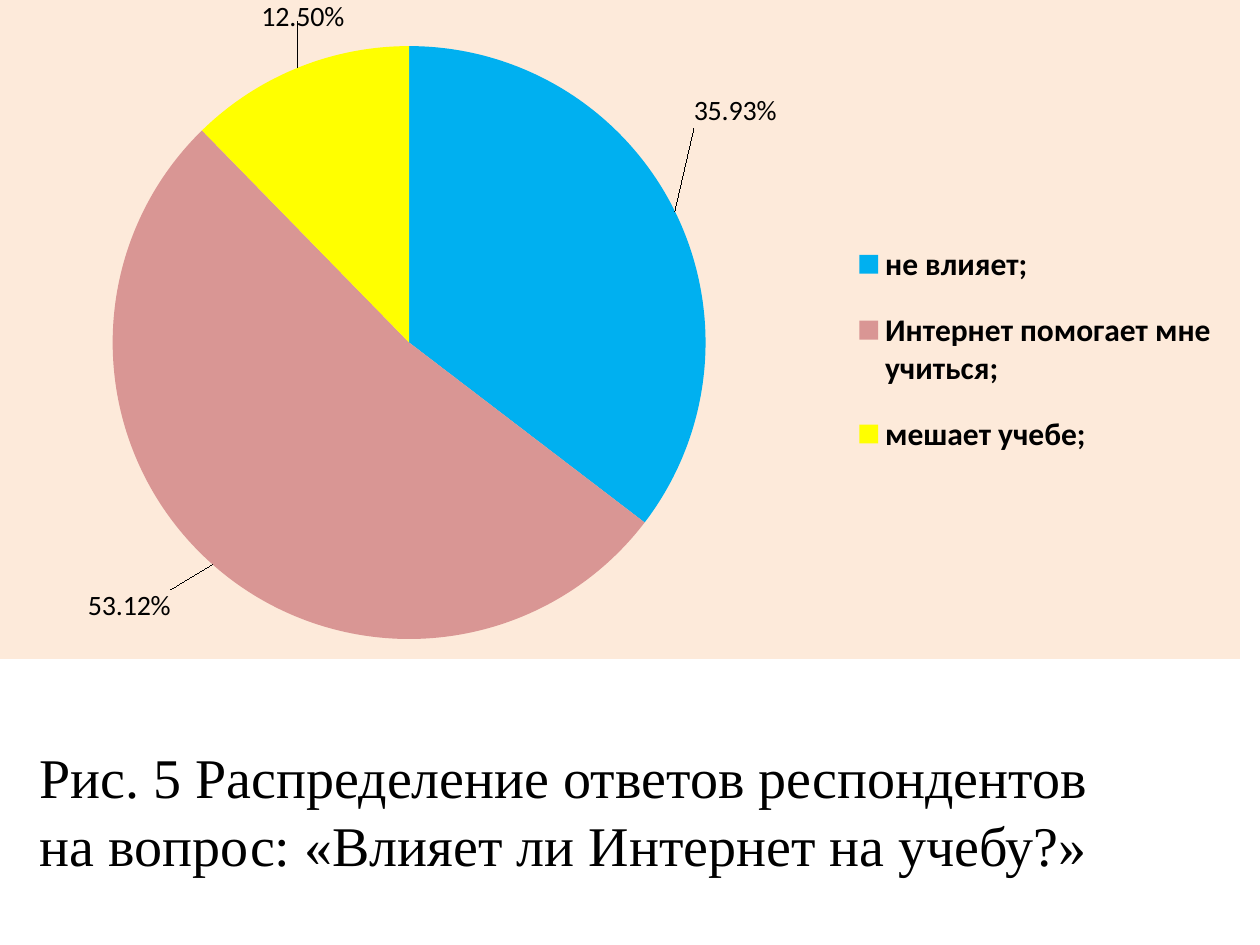
"""Build a slide with a pie chart of survey answers and its caption."""
from pptx import Presentation as Deck
from pptx.chart.data import CategoryChartData as Data
from pptx.dml.color import RGBColor as Color
from pptx.enum.chart import XL_CHART_TYPE as Kind
from pptx.enum.chart import XL_LABEL_POSITION as Spot
from pptx.enum.chart import XL_LEGEND_POSITION as Side
from pptx.enum.text import MSO_ANCHOR as Anchor
from pptx.enum.text import PP_ALIGN as Align
from pptx.oxml import parse_xml
from pptx.oxml.ns import nsdecls
from pptx.util import Pt

BLACK = Color(0x00, 0x00, 0x00)
PEACH = Color(0xFD, 0xEA, 0xDA)
BLUE = Color(0x00, 0xB0, 0xF0)
PINK = Color(0xD9, 0x96, 0x94)
YELLOW = Color(0xFF, 0xFF, 0x00)
FORMAT = "0.00%"

SLICES = [
    ("не влияет;", 0.3593, BLUE, (0.01, -0.12)),
    ("Интернет помогает мне учиться;", 0.5312, PINK, (-0.03, 0.03)),
    ("мешает учебе;", 0.125, YELLOW, (0.04, -0.06)),
]
CAPTION = ("Рис. 5 Распределение ответов респондентов "
           "на вопрос: «Влияет ли Интернет на учебу?»")


def set_font(font, size, name="Calibri", bold=False):
    """Set size, typeface, weight and black colour."""
    font.size, font.name, font.bold = Pt(size), name, bold
    font.color.rgb = BLACK


def make_layout(x, y, w=None, h=None, inner=False):
    """Return a manual layout in fractions of the chart."""
    tags = '<c:layoutTarget val="inner"/>' if inner else ""
    if w:
        tags += '<c:xMode val="edge"/><c:yMode val="edge"/>'
    sizes = zip("xywh", (x, y, w, h))
    tags += "".join(f'<c:{key} val="{val}"/>' for key, val in sizes if val)
    return parse_xml(f'<c:layout {nsdecls("c")}><c:manualLayout>{tags}'
                     '</c:manualLayout></c:layout>')


def place(parent, layout, after=None):
    """Put a layout into its parent in place of an older one."""
    for old in parent.xpath("./c:layout"):
        parent.remove(old)
    if after is None:
        parent.insert(0, layout)
    else:
        after.addnext(layout)


def fill_back(chart, color):
    """Fill the chart area without an outline."""
    area = parse_xml(
        f'<c:spPr {nsdecls("c", "a")}><a:solidFill><a:srgbClr val="{color}"/>'
        '</a:solidFill><a:ln><a:noFill/></a:ln></c:spPr>')
    chart._chartSpace.xpath("./c:chart")[0].addnext(area)


def style_slices(series):
    """Colour the slices and move their labels off the rim."""
    labels = series.data_labels
    labels.show_value = True
    labels.number_format, labels.number_format_is_linked = FORMAT, False
    labels.position = Spot.OUTSIDE_END
    set_font(labels.font, 16)
    for i, (_, _, color, shift) in enumerate(SLICES):
        point = series.points[i]
        point.format.fill.solid()
        point.format.fill.fore_color.rgb = color
        set_font(point.data_label.font, 16)
        point.data_label.position = Spot.OUTSIDE_END
        label = series._element.xpath(f'.//c:dLbl[c:idx/@val="{i}"]')[0]
        layout = make_layout(*shift)
        place(label, layout, label.xpath("./c:idx")[0])
        layout.addnext(parse_xml(
            f'<c:numFmt {nsdecls("c")} formatCode="{FORMAT}" '
            'sourceLinked="0"/>'))


def add_pie(slide):
    """Add the pie chart with its legend."""
    data = Data(number_format=FORMAT)
    data.categories = [name for name, *_ in SLICES]
    data.add_series("Series 1", [value for _, value, *_ in SLICES])
    chart = slide.shapes.add_chart(
        Kind.PIE, Pt(0), Pt(0), Pt(708.5), Pt(376.5), data).chart
    set_font(chart.font, 10)
    chart.has_title = False
    fill_back(chart, PEACH)
    chart.plots[0].vary_by_categories = True
    style_slices(chart.plots[0].series[0])
    place(chart._chartSpace.xpath(".//c:plotArea")[0],
          make_layout(0.09, 0.07, 0.48, 0.9, inner=True))
    chart.has_legend = True
    legend = chart.legend
    legend.position, legend.include_in_layout = Side.RIGHT, False
    set_font(legend.font, 18, bold=True)
    place(legend._element, make_layout(0.68, 0.33, 0.31, 0.4),
          legend._element.xpath("./c:legendPos")[0])


def add_caption(slide):
    """Add the figure caption below the chart."""
    frame = slide.shapes.add_textbox(
        Pt(0), Pt(399.5), Pt(644.5), Pt(83)).text_frame
    frame.word_wrap = True
    frame.vertical_anchor = Anchor.TOP
    frame.margin_top = Pt(25)
    line = frame.paragraphs[0]
    line.text, line.alignment = CAPTION, Align.CENTER
    set_font(line.font, 32, "Times New Roman")


def main():
    """Build and save the slide."""
    deck = Deck()
    deck.slide_width, deck.slide_height = Pt(720), Pt(540)
    slide = deck.slides.add_slide(deck.slide_layouts[6])
    add_caption(slide)
    add_pie(slide)
    deck.save("out.pptx")


if __name__ == "__main__":
    main()
